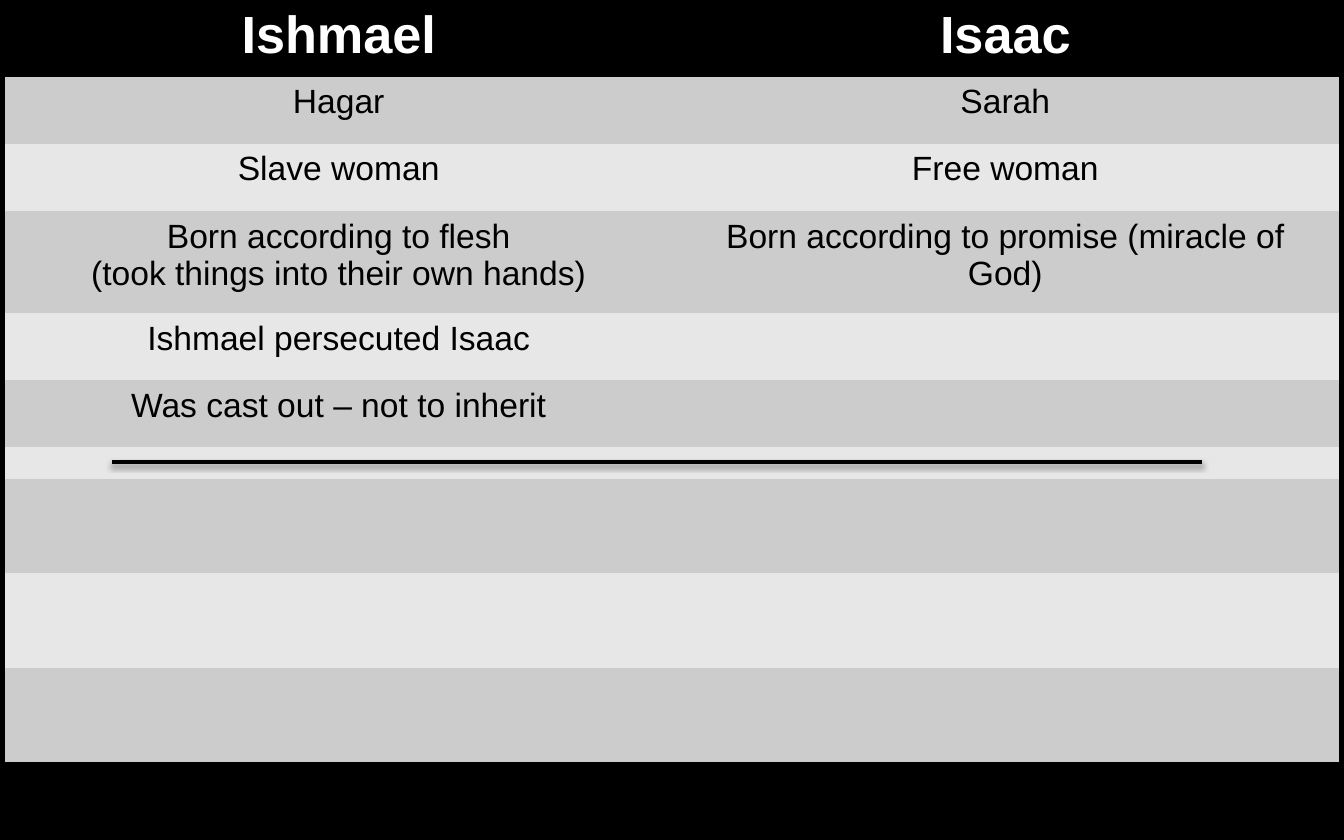
from dataclasses import dataclass

from lxml.etree import SubElement
from pptx import Presentation
from pptx.dml.color import RGBColor
from pptx.enum.shapes import MSO_CONNECTOR
from pptx.enum.text import PP_ALIGN
from pptx.oxml import parse_xml
from pptx.oxml.ns import nsdecls, qn
from pptx.util import Inches, Pt


@dataclass(frozen=True)
class Theme:
    font: str = "Arial"
    black: str = "000000"
    white: str = "FFFFFF"
    bands: tuple = ("CCCCCC", "E7E7E7")
    head: int = 28
    body: int = 18
    gap: int = 8
    rule: int = 2
    plain: str = "{2D5ABB26-0587-4C30-8999-92F81FD0307C}"


class Deck:
    def __init__(self, theme, width, height):
        self.theme = theme
        self.file = Presentation()
        self.file.slide_width = Inches(width)
        self.file.slide_height = Inches(height)
        self.slide = self.file.slides.add_slide(self.file.slide_layouts[6])
        self.paint(self.slide.background.fill, theme.black)

    def paint(self, fill, color):
        fill.solid()
        fill.fore_color.rgb = RGBColor.from_string(color)

    def across(self, share):
        return round(self.file.slide_width * share)

    def down(self, share):
        return round(self.file.slide_height * share)

    def label(self, cell, text, size, color, bold):
        frame = cell.text_frame
        for index, line in enumerate(text.split("\n")):
            para = frame.add_paragraph() if index else frame.paragraphs[0]
            para.alignment = PP_ALIGN.CENTER
            if not line:
                SubElement(para._p, qn("a:endParaRPr"), sz=str(size * 100))
                continue
            run = para.add_run()
            run.text = line
            run.font.name = self.theme.font
            run.font.size = Pt(size)
            run.font.bold = bold
            run.font.color.rgb = RGBColor.from_string(color)

    def table(self, rows, heights, margin):
        look = self.theme
        total = Inches(sum(heights))
        frame = self.slide.shapes.add_table(
            len(rows), len(rows[0]), self.across(margin), 0,
            self.across(1 - 2 * margin), total)
        table = frame.table
        table._tbl.tblPr.find(qn("a:tableStyleId")).text = look.plain
        for index, (texts, height) in enumerate(zip(rows, heights)):
            table.rows[index].height = Inches(height)
            head = index == 0
            fill = look.black if head else look.bands[(index - 1) % 2]
            size = look.head if head else look.body if any(texts) else look.gap
            color = look.white if head else look.black
            for cell, text in zip(table.rows[index].cells, texts):
                self.paint(cell.fill, fill)
                self.label(cell, text, size, color, head)

    def rule(self, left, right, top):
        line = self.slide.shapes.add_connector(
            MSO_CONNECTOR.STRAIGHT, self.across(left), self.down(top),
            self.across(right), self.down(top))
        line.line.width = Pt(self.theme.rule)
        line.line.color.rgb = RGBColor.from_string(self.theme.black)
        line._element.spPr.append(parse_xml(
            f'<a:effectLst {nsdecls("a")}>'
            f'<a:outerShdw blurRad="{Pt(3.1)}" dist="{Pt(1.6)}" dir="5400000" rotWithShape="0">'
            f'<a:srgbClr val="{self.theme.black}"><a:alpha val="38000"/></a:srgbClr>'
            '</a:outerShdw></a:effectLst>'))


def main():
    rows = [
        ("Ishmael", "Isaac"),
        ("Hagar", "Sarah"),
        ("Slave woman", "Free woman"),
        ("Born according to flesh\n(took things into their own hands)",
         "Born according to promise (miracle of God)"),
        ("Ishmael persecuted Isaac", ""),
        ("Was cast out – not to inherit", ""),
    ] + [("", "")] * 4
    heights = [0.57, 0.5, 0.5, 0.76, 0.5, 0.5, 0.23] + [0.7] * 3
    deck = Deck(Theme(), 10, 6.25)
    deck.table(rows, heights, margin=0.004)
    deck.rule(left=0.083, right=0.894, top=0.55)
    deck.file.save("out.pptx")


if __name__ == "__main__":
    main()
